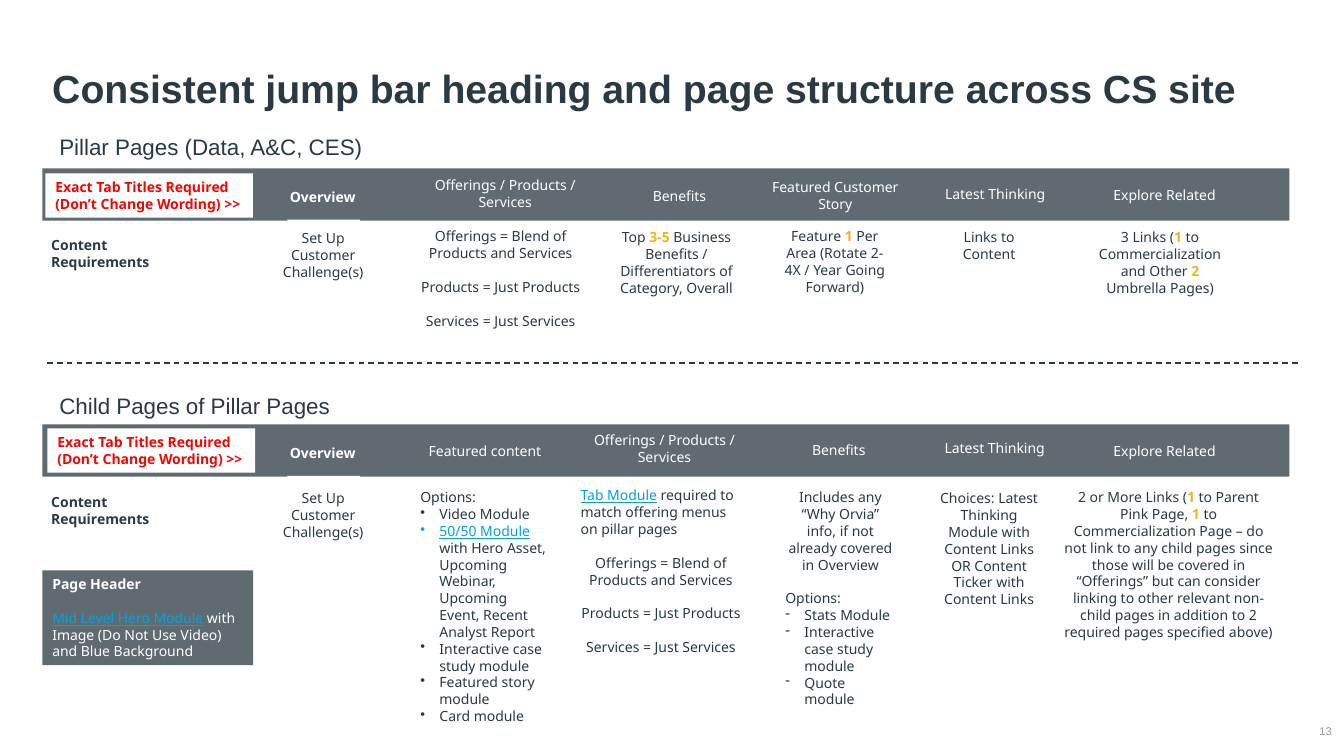
from dataclasses import dataclass
from typing import NamedTuple

from lxml import etree
from pptx import Presentation
from pptx.dml.color import RGBColor
from pptx.enum.dml import MSO_LINE
from pptx.enum.shapes import MSO_CONNECTOR, MSO_SHAPE
from pptx.enum.text import MSO_ANCHOR, MSO_AUTO_SIZE, PP_ALIGN
from pptx.oxml.ns import qn
from pptx.util import Inches, Pt

LEFT, CENTER, RIGHT = PP_ALIGN.LEFT, PP_ALIGN.CENTER, PP_ALIGN.RIGHT
TOP, MIDDLE, BOTTOM = MSO_ANCHOR.TOP, MSO_ANCHOR.MIDDLE, MSO_ANCHOR.BOTTOM
GROW = MSO_AUTO_SIZE.SHAPE_TO_FIT_TEXT
RECTANGLE, STRAIGHT, DASH = MSO_SHAPE.RECTANGLE, MSO_CONNECTOR.STRAIGHT, MSO_LINE.DASH

COLORS = {"ink": "2B3A42", "slate": "606B71", "white": "FFFFFF", "amber": "F0B323",
          "link": "00A3E0", "red": "FF0000", "grey": "959CA0"}

BODY = {"name": "Noto Sans", "size": Pt(10), "bold": False}
HEADING = {"name": "Arial", "size": Pt(16)}
FORMATS = {
    "body": (BODY, "ink"),
    "label": (BODY | {"bold": True}, "ink"),
    "count": (BODY | {"bold": True}, "amber"),
    "link": (BODY | {"underline": True}, "link"),
    "tab": (BODY, "white"),
    "active": (BODY | {"bold": True}, "white"),
    "warning": (BODY | {"bold": True}, "red"),
    "title": (HEADING | {"size": Pt(28), "bold": True}, "ink"),
    "heading": (HEADING, "ink"),
    "number": (HEADING | {"size": Pt(8)}, "grey"),
}
BLANK_LINE = Pt(12.1)
HANGING = Inches(0.19)


class Run(NamedTuple):
    text: str
    style: str = "body"


@dataclass
class Para:
    runs: list[Run]
    align: PP_ALIGN = CENTER
    gap: bool = False
    bullet: str = ""


class Box(NamedTuple):
    left: float
    top: float
    width: float
    height: float


@dataclass
class Tab:
    title: str
    title_box: Box
    content: list[Para]
    content_box: Box


@dataclass
class Section:
    heading: str
    heading_top: float
    bar_top: float
    badge_left: float
    badge_top: float
    label_top: float
    challenge_top: float
    tabs: list[Tab]


def rgb(name: str) -> RGBColor:
    return RGBColor.from_string(COLORS[name])


def one(text: str, style: str = "body", align: PP_ALIGN = CENTER) -> list[Para]:
    """Content that is a single paragraph in a single style."""
    return [Para([Run(text, style)], align)]


def bulleted(mark: str, *items: str) -> list[Para]:
    return [Para([Run(item)], LEFT, bullet=mark) for item in items]


def write(frame, paras: list[Para], anchor: MSO_ANCHOR = TOP) -> None:
    frame.word_wrap = True
    frame.vertical_anchor = anchor
    for index, para in enumerate(paras):
        paragraph = frame.add_paragraph() if index else frame.paragraphs[0]
        paragraph.alignment = para.align
        if para.gap:
            paragraph.space_before = BLANK_LINE
        if para.bullet:
            properties = paragraph._p.get_or_add_pPr()
            properties.set("marL", str(HANGING))
            properties.set("indent", str(-HANGING))
            etree.SubElement(properties, qn("a:buChar")).set("char", para.bullet)
        for text, style in para.runs:
            run = paragraph.add_run()
            run.text = text
            values, color = FORMATS[style]
            for attribute, value in values.items():
                setattr(run.font, attribute, value)
            run.font.color.rgb = rgb(color)


def add_text(slide, box: Box, paras: list[Para], anchor: MSO_ANCHOR = TOP):
    frame = slide.shapes.add_textbox(*map(Inches, box)).text_frame
    write(frame, paras, anchor)
    if anchor == TOP:
        frame.auto_size = GROW
    return frame


def add_block(slide, box: Box, color: str, paras: list[Para] | None = None) -> None:
    block = slide.shapes.add_shape(RECTANGLE, *map(Inches, box))
    block.shadow.inherit = False
    block.fill.solid()
    block.fill.fore_color.rgb = rgb(color)
    block.line.fill.background()
    if paras:
        write(block.text_frame, paras)


def add_divider(slide, left: float, right: float, top: float) -> None:
    divider = slide.shapes.add_connector(STRAIGHT, *map(Inches, (left, top, right, top)))
    divider.line.color.rgb = rgb("ink")
    divider.line.width = Pt(1)
    divider.line.dash_style = DASH
    etree.SubElement(divider._element.spPr, qn("a:effectLst"))


def add_section(slide, section: Section) -> None:
    bar = section.bar_top
    add_text(slide, Box(0.49, section.heading_top, 4.22, 0.37),
             one(section.heading, "heading", LEFT))
    add_block(slide, Box(0.42, bar, 12.37, 0.52), "slate")
    add_block(slide, Box(2.85, bar + 0.51, 0.72, 0.05), "white")
    add_block(slide, Box(section.badge_left, section.badge_top, 2.06, 0.44), "white",
              one("Exact Tab Titles Required (Don’t Change Wording) >>", "warning", LEFT))
    add_text(slide, Box(0.41, section.label_top, 1.32, 0.44),
             one("Content Requirements", "label", LEFT))
    add_text(slide, Box(2.56, bar + 0.15, 1.28, 0.27), one("Overview", "active"))
    add_text(slide, Box(2.63, section.challenge_top, 1.15, 0.61),
             one("Set Up Customer Challenge(s)"))
    for tab in section.tabs:
        add_text(slide, tab.title_box, one(tab.title, "tab"))
        add_text(slide, tab.content_box, tab.content)


OFFERINGS = "Offerings / Products / Services"
BLEND = Para([Run("Offerings = Blend of Products and Services")])
KINDS = [Para([Run(f"{kind} = Just {kind}")], gap=True) for kind in ("Products", "Services")]

PILLAR = Section("Pillar Pages (Data, A&C, CES)", 1.27, 1.67, 0.45, 1.72, 2.3, 2.23, [
    Tab(OFFERINGS, Box(4.15, 1.7, 1.72, 0.44), [BLEND, *KINDS], Box(4.07, 2.21, 1.79, 1.11)),
    Tab("Benefits", Box(6.1, 1.81, 1.28, 0.27),
        [Para([Run("Top "), Run("3-5", "count"),
               Run(" Business Benefits / Differentiators of Category, Overall")])],
        Box(6.01, 2.22, 1.4, 0.77)),
    Tab("Featured Customer Story", Box(7.45, 1.72, 1.67, 0.44),
        [Para([Run("Feature "), Run("1", "count"),
               Run(" Per Area (Rotate 2-4X / Year Going Forward)")])],
        Box(7.66, 2.21, 1.24, 0.77)),
    Tab("Latest Thinking", Box(9.23, 1.79, 1.28, 0.27),
        one("Links to Content"), Box(9.19, 2.22, 1.24, 0.44)),
    Tab("Explore Related", Box(10.91, 1.8, 1.28, 0.27),
        [Para([Run("3 Links ("), Run("1", "count"),
               Run(" to Commercialization and Other "), Run("2", "count"),
               Run(" Umbrella Pages)")])],
        Box(10.78, 2.22, 1.45, 0.77)),
])

CHILD = Section("Child Pages of Pillar Pages", 3.84, 4.21, 0.47, 4.25, 4.85, 4.81, [
    Tab("Featured content", Box(3.9, 4.34, 1.82, 0.27),
        [*one("Options:", align=LEFT), *bulleted("•", "Video Module"),
         Para([Run("50/50 Module", "link"),
               Run(" with Hero Asset, Upcoming Webinar, Upcoming Event, "
                   "Recent Analyst Report")], LEFT, bullet="•"),
         *bulleted("•", "Interactive case study module", "Featured story module",
                   "Card module")],
        Box(4.07, 4.8, 1.45, 2.45)),
    Tab(OFFERINGS, Box(5.73, 4.23, 1.72, 0.44),
        [Para([Run("Tab Module", "link"),
               Run(" required to match offering menus on pillar pages")], LEFT),
         Para(BLEND.runs, gap=True), *KINDS],
        Box(5.66, 4.78, 1.79, 1.78)),
    Tab("Benefits", Box(7.68, 4.33, 1.28, 0.27),
        [*one("Includes any “Why Orvia” info, if not already covered in Overview"),
         Para([Run("Options:")], LEFT, gap=True),
         *bulleted("-", "Stats Module", "Interactive case study module", "Quote module")],
        Box(7.69, 4.8, 1.29, 2.29)),
    Tab("Latest Thinking", Box(8.92, 4.31, 1.89, 0.27),
        one("Choices: Latest Thinking Module with Content Links OR Content Ticker "
            "with Content Links"),
        Box(9.19, 4.81, 1.24, 1.28)),
    Tab("Explore Related", Box(10.91, 4.34, 1.28, 0.27),
        [Para([Run("2 or More Links ("), Run("1", "count"), Run(" to Parent Pink Page, "),
               Run("1", "count"),
               Run(" to Commercialization Page – do not link to any child pages since those "
                   "will be covered in “Offerings” but can consider linking to other relevant "
                   "non-child pages in addition to 2 required pages specified above)")])],
        Box(10.44, 4.8, 2.3, 1.62)),
])

PAGE_HEADER = [
    Para([Run("Page Header", "active")], LEFT),
    Para([Run("Mid Level Hero Module", "link"),
          Run(" with Image (Do Not Use Video) and Blue Background", "tab")], LEFT, gap=True),
]


def main() -> None:
    deck = Presentation()
    deck.slide_width, deck.slide_height = Inches(13.33), Inches(7.5)
    slide = deck.slides.add_slide(deck.slide_layouts[6])
    title = add_text(slide, Box(0.42, 0.32, 12.4, 0.84),
                     one("Consistent jump bar heading and page structure across CS site",
                         "title", LEFT), BOTTOM)
    title.paragraphs[0].line_spacing = 0.9
    for section in (PILLAR, CHILD):
        add_section(slide, section)
    add_divider(slide, 0.47, 12.87, 3.6)
    add_block(slide, Box(0.42, 5.66, 2.09, 0.94), "slate", PAGE_HEADER)
    number = add_text(slide, Box(12.82, 7.16, 0.39, 0.19), one("13", "number", RIGHT), MIDDLE)
    for side in ("left", "top", "right", "bottom"):
        setattr(number, f"margin_{side}", 0)
    deck.save("out.pptx")


if __name__ == "__main__":
    main()
